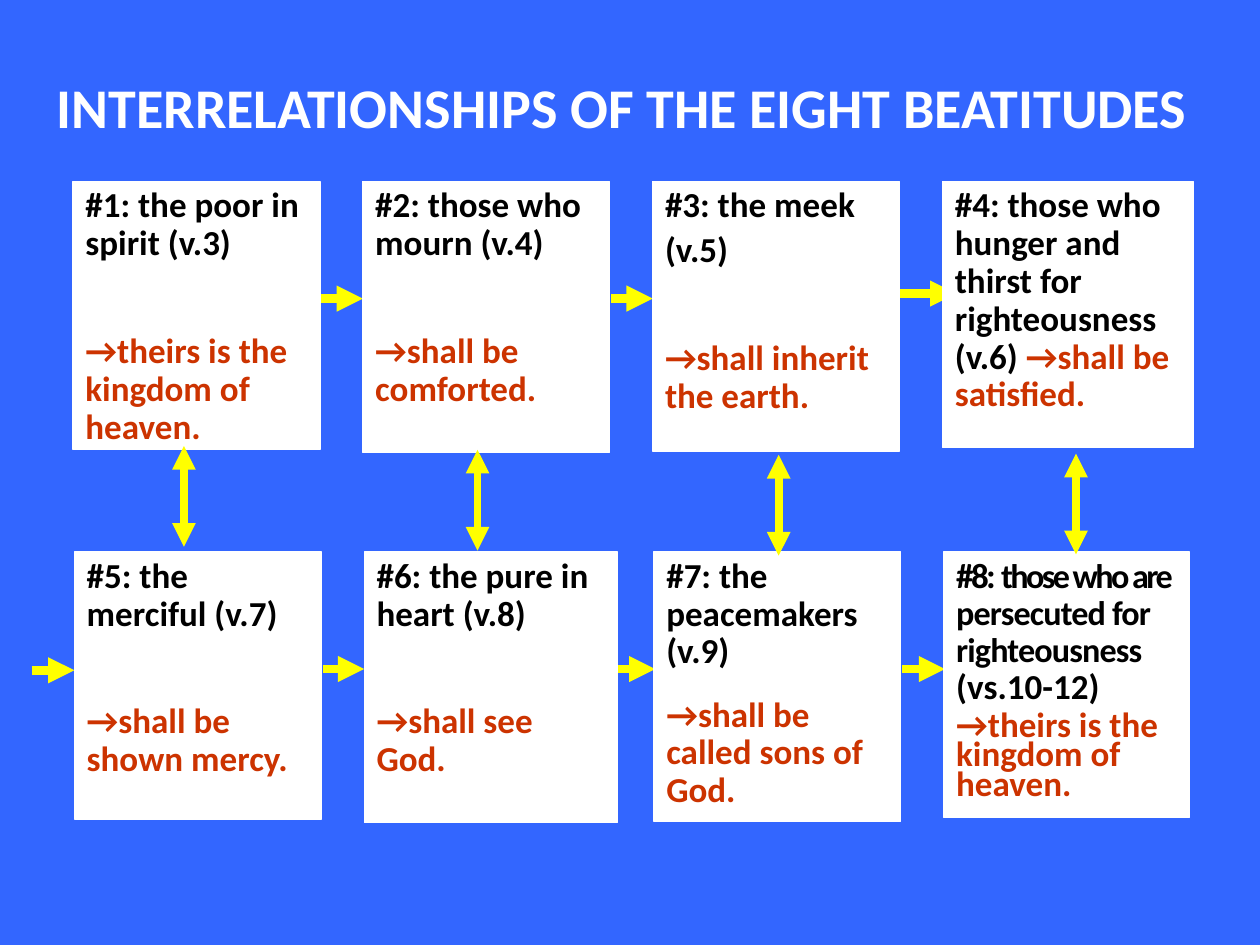
from dataclasses import dataclass

from lxml.etree import SubElement
from pptx import Presentation
from pptx.dml.color import RGBColor
from pptx.enum.shapes import MSO_CONNECTOR as Conn, MSO_SHAPE as Shape
from pptx.enum.text import MSO_ANCHOR as Anchor, PP_ALIGN as Align
from pptx.oxml.ns import qn
from pptx.util import Inches, Pt


@dataclass(frozen=True)
class Theme:
    font: str = "Calibri"
    back: str = "3366FF"
    white: str = "FFFFFF"
    black: str = "000000"
    promise: str = "CC3300"
    arrow: str = "FFFF00"
    title_size: float = 32
    body_size: float = 20
    tight_size: float = 19.5
    spacing: float = 0.9
    para_gap: float = 4
    promise_gap: float = 40
    across: float = 5
    down: float = 4.5


T = Theme()
TITLE = "INTERRELATIONSHIPS OF THE EIGHT BEATITUDES"

# A paragraph is a list of (text, format) runs plus its own format.
BLESSED = dict(color=T.black)
PROMISE = dict(color=T.promise)


def para(*runs, **fmt):
    return runs, fmt


def beatitude(who, promise, gap=T.promise_gap):
    """Group named at the top, its promise below after a gap."""
    lines = [para((line, BLESSED), before=T.para_gap) for line in who.split("\n")]
    return lines + [para((promise, PROMISE), before=gap)]


# Each box: width, height, paragraphs
ROWS = [
    [
        (1.96, 2.13, beatitude("#1: the poor in spirit (v.3)", "→theirs is the kingdom of heaven.")),
        (1.96, 2.15, beatitude("#2: those who mourn (v.4)", "→shall be comforted.")),
        (1.96, 2.14, beatitude("#3: the meek\n(v.5)", "→shall inherit the earth.")),
        (1.99, 2.11, [para(
            ("#4: those who hunger and thirst for righteousness (v.6) ", BLESSED),
            ("→shall be satisfied.", PROMISE))]),
    ],
    [
        (1.96, 2.12, beatitude("#5: the merciful (v.7)", "→shall be shown mercy.")),
        (2.01, 2.15, beatitude("#6: the pure in heart (v.8)", "→shall see God.")),
        (1.96, 2.14, beatitude("#7: the peacemakers (v.9)", "→shall be called sons of God.", gap=14.5)),
        (1.95, 2.11, [
            para(("#8: ", dict(spc=-1.5)),
                 ("those who are ", dict(size=T.tight_size, spc=-1.5)),
                 ("persecuted for righteousness ", dict(size=T.tight_size, spc=-0.5)),
                 ("(vs.10-12)", BLESSED)),
            para(("→theirs is the kingdom of heaven.", PROMISE),
                 before=T.para_gap, spacing=Pt(17)),
        ]),
    ],
]
ORIGINS = [(0.58, 1.44), (0.59, 4.38)]  # left and top of each row
PITCH = 2.3

# Arrows across: start, end, height; arrows down: centre, top
ACROSS = [(2.55, 2.88, 2.37), (4.85, 5.18, 2.37), (7.07, 7.59, 2.33),
          (0.25, 0.59, 5.32), (2.56, 2.89, 5.31), (4.86, 5.2, 5.31), (7.16, 7.5, 5.31)]
DOWN = [(1.46, 3.54), (3.79, 3.57), (6.18, 3.61), (8.54, 3.6)]
DOWN_LENGTH = 0.8


def rgb(color):
    return RGBColor.from_string(color)


def add_run(p, text, color=T.black, size=T.body_size, spc=None):
    r = p.add_run()
    r.text = text
    f = r.font
    f.name, f.size, f.bold = T.font, Pt(size), True
    f.color.rgb = rgb(color)
    if spc is not None:
        r._r.get_or_add_rPr().set("spc", str(round(spc * 100)))


def write(tf, paragraphs, align=Align.LEFT, anchor=Anchor.TOP):
    tf.word_wrap, tf.vertical_anchor = True, anchor
    for i, (runs, fmt) in enumerate(paragraphs):
        p = tf.add_paragraph() if i else tf.paragraphs[0]
        p.alignment = align
        p.line_spacing = fmt.get("spacing", T.spacing)
        p.space_before = Pt(fmt.get("before", 0) if i else 0)
        for text, style in runs:
            add_run(p, text, **style)


def add_arrow(s, x1, y1, x2, y2, width, ends):
    line = s.shapes.add_connector(Conn.STRAIGHT, *map(Inches, (x1, y1, x2, y2)))
    line.line.color.rgb, line.line.width = rgb(T.arrow), Pt(width)
    for end in ends:
        SubElement(line.line._get_or_add_ln(), qn(f"a:{end}"), type="triangle")
    SubElement(line._element.spPr, qn("a:effectLst"))


def add_box(s, x, y, w, h, paragraphs):
    sp = s.shapes.add_shape(Shape.RECTANGLE, *map(Inches, (x, y, w, h)))
    sp.shadow.inherit = False
    sp.fill.solid()
    sp.fill.fore_color.rgb = sp.line.color.rgb = rgb(T.white)
    sp.line.width = Pt(0.75)
    write(sp.text_frame, paragraphs)


def main():
    prs = Presentation()
    prs.slide_width, prs.slide_height = Inches(10), Inches(7.5)
    s = prs.slides.add_slide(prs.slide_layouts[5])
    s.background.fill.solid()
    s.background.fill.fore_color.rgb = rgb(T.back)

    title = s.shapes.title
    title.left, title.top, title.width, title.height = map(Inches, (0, 0.58, 9.88, 0.59))
    write(title.text_frame, [para((TITLE, dict(color=T.white, size=T.title_size)))],
          align=Align.CENTER, anchor=Anchor.MIDDLE)

    for start, end, y in ACROSS:
        add_arrow(s, start, y, end, y, T.across, ["tailEnd"])
    for (left, top), row in zip(ORIGINS, ROWS):
        for col, (w, h, paragraphs) in enumerate(row):
            add_box(s, left + col * PITCH, top, w, h, paragraphs)
    for x, top in DOWN:
        add_arrow(s, x, top + DOWN_LENGTH, x, top, T.down, ["headEnd", "tailEnd"])
    prs.save("out.pptx")


if __name__ == "__main__":
    main()
